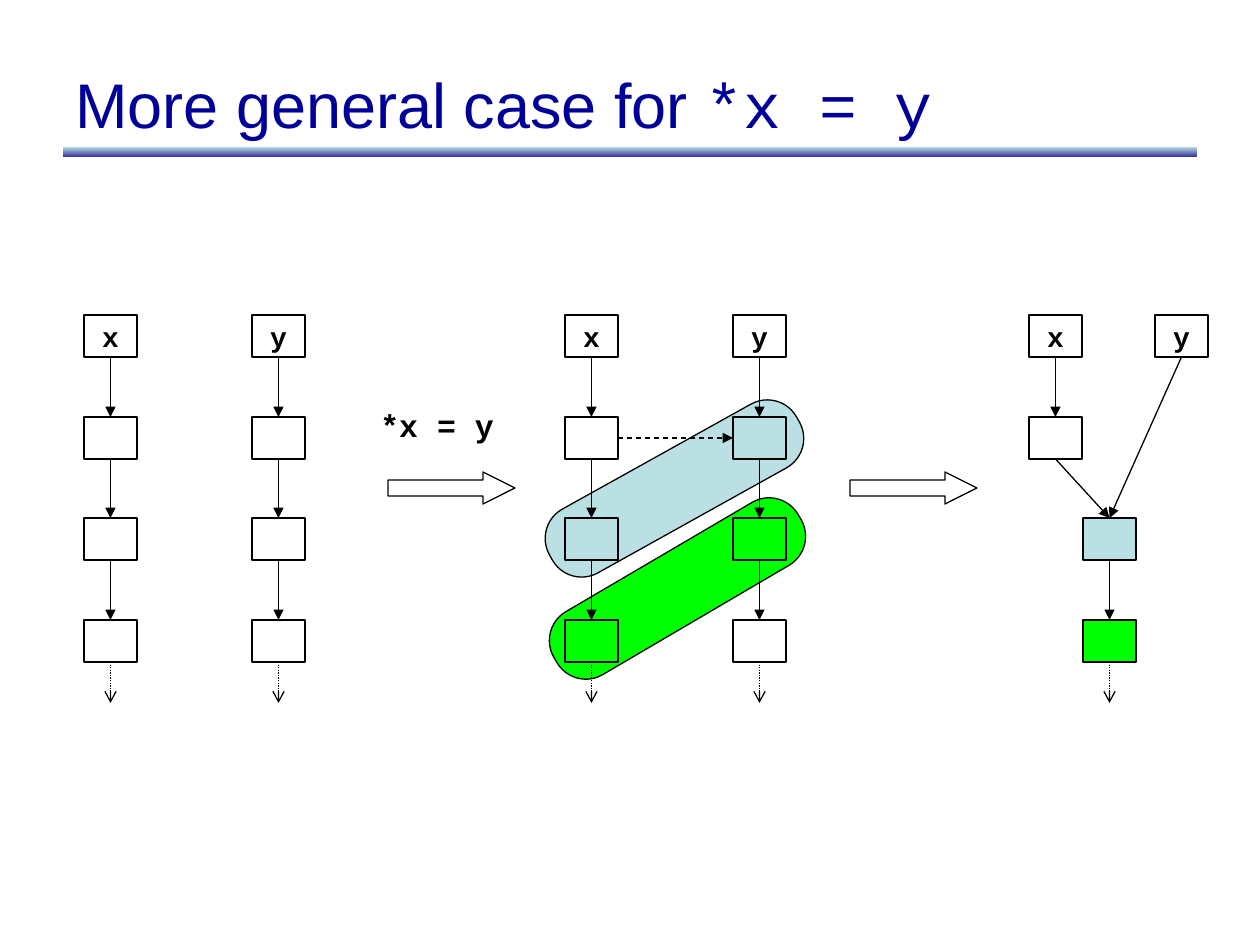
from lxml.etree import SubElement
from pptx import Presentation
from pptx.dml.color import RGBColor
from pptx.enum.dml import MSO_LINE
from pptx.enum.shapes import MSO_CONNECTOR, MSO_SHAPE
from pptx.enum.text import MSO_ANCHOR, PP_ALIGN
from pptx.oxml.ns import qn
from pptx.util import Emu, Pt

PX = 914400 / 126
BLACK, NAVY, PALE, GREEN = "000000", "000099", "BBE0E3", "00FF00"
BOX_W, BOX_H = 53, 42
FIRST_TOP, LAST_TOP, STUB_END = 315, 620, 703

TITLE = [("More general case for ", "Arial"), ("*x = y", "Courier New")]
STATEMENT = "*x = y"
PILLS = [(536, 552, 329.6, GREEN), (533, 452, 330.9, PALE)]
BLOCK_ARROWS = [388, 850]
COLUMNS = [
    ("before x", 84, 0, "x", [None] * 4),
    ("before y", 252, 0, "y", [None] * 4),
    ("during x", 565, 0, "x", [None] * 4),
    ("during y", 733, 0, "y", [None] * 4),
    ("after x", 1029, 0, "x", [None] * 2),
    ("after y", 1155, 0, "y", [None]),
    ("after merged", 1083, 2, "", [PALE, GREEN]),
]
CROSS_LINKS = [
    (("during x", 1), 3, ("during y", 1), 1, MSO_LINE.DASH),
    (("after x", 1), 2, ("after merged", 2), 0, None),
    (("after y", 0), 2, ("after merged", 2), 0, None),
]


def px(*lengths):
    return [Emu(round(length * PX)) for length in lengths]


def rgb(value):
    return RGBColor.from_string(value)


def apply(target, **values):
    for name, value in values.items():
        setattr(target, name, value)


def add_outlined(kind, left, top, width, height, fill=None):
    shape = slide.shapes.add_shape(kind, *px(left, top, width, height))
    shape.shadow.inherit = False
    if fill:
        shape.fill.solid()
        shape.fill.fore_color.rgb = rgb(fill)
    else:
        shape.fill.background()
    shape.line.color.rgb = rgb(BLACK)
    shape.line.width = Pt(0.75)
    return shape


def write(frame, runs, size, color, bold, align=PP_ALIGN.LEFT, **frame_format):
    apply(frame, **frame_format)
    paragraph = frame.paragraphs[0]
    paragraph.alignment = align
    for text, font_name in runs:
        run = paragraph.add_run()
        run.text = text
        apply(run.font, name=font_name, size=Pt(size), bold=bold)
        run.font.color.rgb = rgb(color)


def add_arrow(source, source_side, target=None, target_side=0, dash=None, head="triangle"):
    center = source.left + source.width // 2
    arrow = slide.shapes.add_connector(
        MSO_CONNECTOR.STRAIGHT, center, source.top + source.height, center, *px(STUB_END))
    arrow.begin_connect(source, source_side)
    if target is not None:
        arrow.end_connect(target, target_side)
    apply(arrow.line, width=Pt(0.75), dash_style=dash)
    arrow.line.color.rgb = rgb(BLACK)
    SubElement(arrow.line._get_or_add_ln(), qn("a:tailEnd"), type=head)
    SubElement(arrow._element.spPr, qn("a:effectLst"))


deck = Presentation()
apply(deck, slide_width=px(1260)[0], slide_height=px(945)[0])
slide = deck.slides.add_slide(deck.slide_layouts[6])

rule = slide.shapes.add_shape(MSO_SHAPE.RECTANGLE, *px(63, 147, 1134, 10))
rule.shadow.inherit = False
rule.line.fill.background()
rule.fill.gradient()
rule.fill.gradient_angle = 270
for stop, color in zip(rule.fill.gradient_stops, (PALE, "333399")):
    stop.color.rgb = rgb(color)

for left, top, angle, fill in PILLS:
    pill = add_outlined(MSO_SHAPE.ROUNDED_RECTANGLE, left, top, 283, 73, fill)
    pill.rotation = angle
    pill.adjustments[0] = 0.46

for left in BLOCK_ARROWS:
    block_arrow = add_outlined(MSO_SHAPE.RIGHT_ARROW, left, 472, 127, 32)
    block_arrow.adjustments[0], block_arrow.adjustments[1] = 0.5, 1

nodes = {}
for column, left, first_row, label, fills in COLUMNS:
    for row, fill in enumerate(fills, first_row):
        top = FIRST_TOP + round((LAST_TOP - FIRST_TOP) * row / 3)
        node = nodes[column, row] = add_outlined(
            MSO_SHAPE.RECTANGLE, left, top, BOX_W, BOX_H, fill)
        if row == 0:
            write(node.text_frame, [(label, "Courier New")], 16, BLACK, True, PP_ALIGN.CENTER,
                  word_wrap=False, vertical_anchor=MSO_ANCHOR.MIDDLE)
        if row > first_row:
            add_arrow(nodes[column, row - 1], 2, node)
        if row == 3:
            add_arrow(node, 2, dash=MSO_LINE.ROUND_DOT, head="arrow")

for source, source_side, target, target_side, dash in CROSS_LINKS:
    add_arrow(nodes[source], source_side, nodes[target], target_side, dash)

statement = slide.shapes.add_textbox(*px(368, 400, 139, 50))
write(statement.text_frame, [(STATEMENT, "Courier New")], 18, BLACK, True, word_wrap=False)

title = slide.shapes.add_textbox(*px(63, 38, 1134, 130))
write(title.text_frame, TITLE, 36, NAVY, False,
      word_wrap=True, vertical_anchor=MSO_ANCHOR.MIDDLE)

deck.save("out.pptx")
